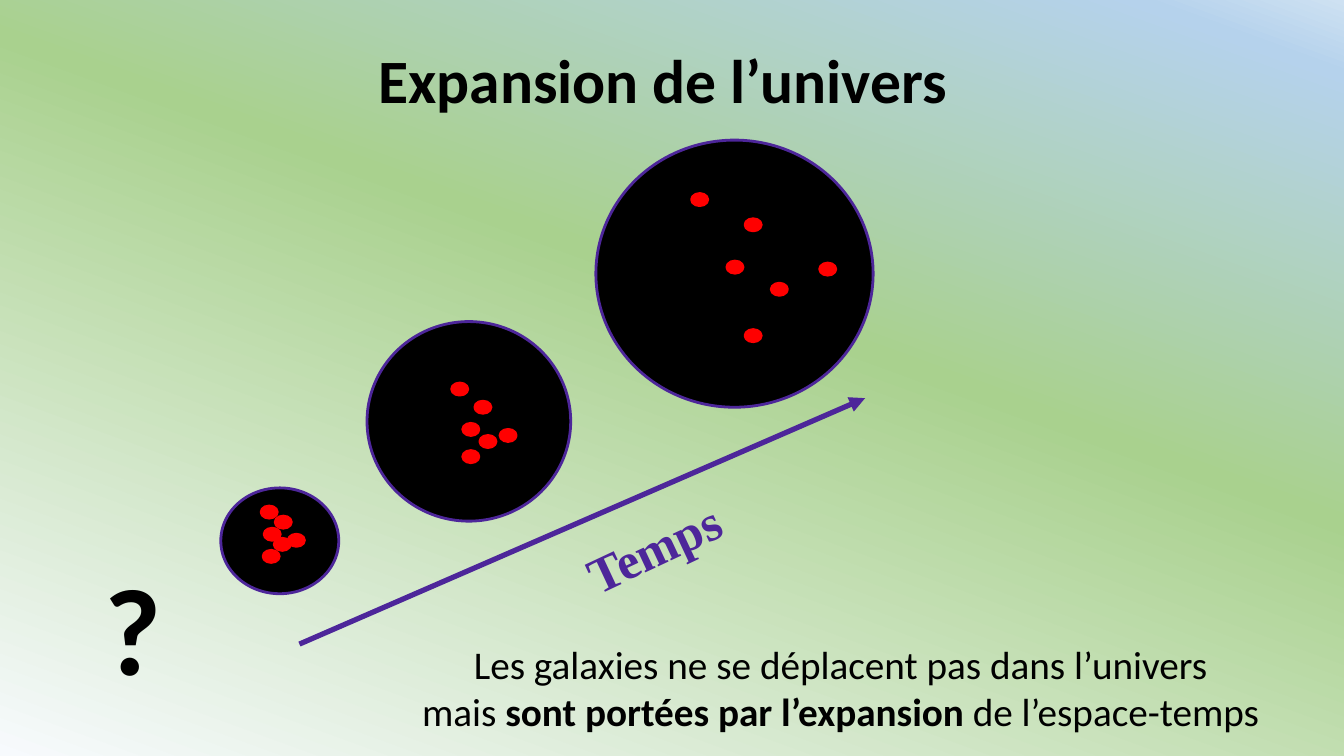
"""Build the slide about the expansion of the universe."""
from lxml import etree
from pptx import Presentation
from pptx.dml.color import RGBColor
from pptx.enum.shapes import MSO_CONNECTOR, MSO_SHAPE
from pptx.enum.text import MSO_ANCHOR, PP_ALIGN
from pptx.oxml.ns import qn
from pptx.util import Inches, Pt

COLORS = {
    "text": "000000",
    "space": "000000",
    "galaxy": "FF0000",
    "time": "4D269A",
    "haze": "F7FAFD",
    "green": "A9D18E",
    "blue": "B5D2EC",
    "sky": "CEE1F2",
}


def add_text(paragraphs, box, size, font="Calibri", color="text", align=PP_ALIGN.LEFT,
             anchor=MSO_ANCHOR.TOP, spacing=1.0, inset=None, rotation=0):
    """Add a text box; each paragraph is a list of (text, bold) runs."""
    label = slide.shapes.add_textbox(*map(Inches, box))
    label.rotation = rotation
    frame = label.text_frame
    frame.word_wrap = True
    frame.vertical_anchor = anchor
    if inset is not None:
        frame.margin_left = frame.margin_right = Inches(inset)
        frame.margin_top = frame.margin_bottom = Inches(inset)
    for index, runs in enumerate(paragraphs):
        paragraph = frame.add_paragraph() if index else frame.paragraphs[0]
        paragraph.alignment = align
        paragraph.line_spacing = spacing
        for text, bold in runs:
            run = paragraph.add_run()
            run.text = text
            run.font.size = Pt(size)
            run.font.name = font
            run.font.bold = bold
            run.font.color.rgb = RGBColor.from_string(COLORS[color])


def add_ellipse(box, fill, line):
    """Add a filled ellipse with a 2 pt outline."""
    ellipse = slide.shapes.add_shape(MSO_SHAPE.OVAL, *map(Inches, box))
    ellipse.shadow.inherit = False
    ellipse.fill.solid()
    ellipse.fill.fore_color.rgb = RGBColor.from_string(COLORS[fill])
    ellipse.line.color.rgb = RGBColor.from_string(COLORS[line])
    ellipse.line.width = Pt(2)


prs = Presentation()
prs.slide_width = Inches(13.33)
prs.slide_height = Inches(7.5)
slide = prs.slides.add_slide(prs.slide_layouts[6])

backdrop = slide.background.fill
backdrop.gradient()
backdrop.gradient_angle = 70
stops = slide.element.find(".//" + qn("a:gsLst"))
for old_stop in list(stops):
    stops.remove(old_stop)
for percent, name in [(0, "haze"), (58, "green"), (94, "blue"), (100, "sky")]:
    stop = etree.SubElement(stops, qn("a:gs"), pos=str(percent * 1000))
    etree.SubElement(stop, qn("a:srgbClr"), val=COLORS[name])

add_text([[("Expansion de l’univers", True)]], (0.83, 0.1, 11.5, 1.45), 44,
         align=PP_ALIGN.CENTER, anchor=MSO_ANCHOR.MIDDLE, spacing=0.9)
add_text([[("Les galaxies ne se déplacent pas dans l’univers ", False)],
          [("mais ", False), ("sont portées par l’expansion ", True),
           ("de l’espace-temps ", False)]],
         (3.64, 6.3, 9.48, 1.04), 28, align=PP_ALIGN.CENTER)

time_arrow = slide.shapes.add_connector(
    MSO_CONNECTOR.STRAIGHT, Inches(2.97), Inches(6.39), Inches(8.58), Inches(3.95))
time_arrow.line.color.rgb = RGBColor.from_string(COLORS["time"])
time_arrow.line.width = Pt(3.75)
arrow_properties = time_arrow.element.find(qn("p:spPr"))
etree.SubElement(arrow_properties.find(qn("a:ln")), qn("a:tailEnd"), type="triangle")
etree.SubElement(arrow_properties, qn("a:effectLst"))
add_text([[("Temps", True)]], (5.73, 5.03, 1.74, 0.68), 36, font="Times New Roman",
         color="time", inset=0.04, rotation=334.8)

universes = [
    ((2.19, 4.84, 1.17, 1.05),
     [(2.73, 5.12), (2.59, 5.02), (2.86, 5.3), (2.62, 5.24), (2.72, 5.34), (2.61, 5.46)]),
    ((3.64, 3.19, 2.02, 1.98),
     [(4.96, 4.26), (4.76, 4.32), (4.59, 4.47), (4.59, 4.2), (4.71, 3.98), (4.48, 3.8)]),
    ((5.91, 1.39, 2.75, 2.65),
     [(7.39, 3.27), (6.86, 1.92), (7.39, 2.17), (7.21, 2.59), (7.65, 2.81), (8.13, 2.61)]),
]
for universe, galaxies in universes:
    add_ellipse(universe, "space", "time")
    for left, top in galaxies:
        add_ellipse((left, top, 0.16, 0.12), "galaxy", "galaxy")

add_text([[("?", True)]], (0.94, 5.43, 1.14, 1.58), 88)

prs.save("out.pptx")
